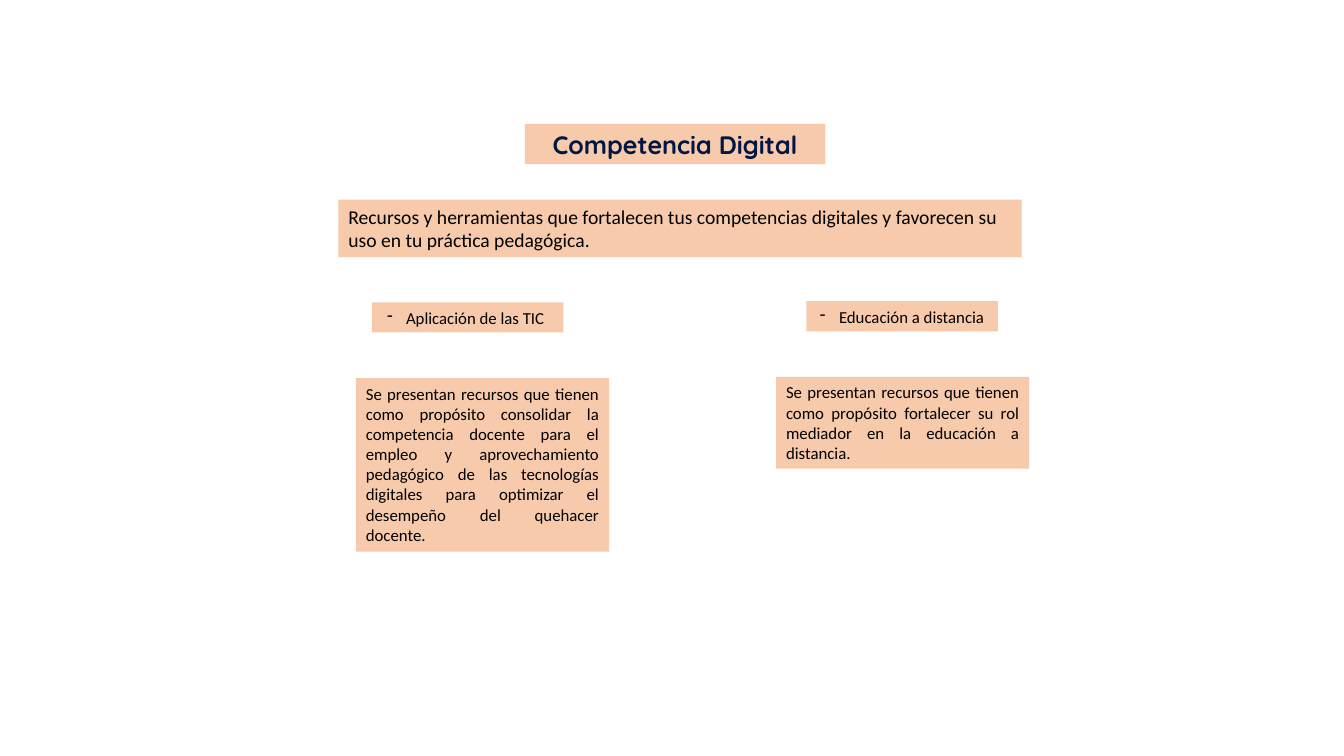
from lxml.etree import SubElement
from pptx import Presentation
from pptx.dml.color import RGBColor
from pptx.enum.shapes import MSO_SHAPE
from pptx.enum.text import MSO_ANCHOR, MSO_AUTO_SIZE, PP_ALIGN
from pptx.oxml.ns import qn
from pptx.util import Cm, Pt

PEACH = RGBColor(0xF7, 0xCA, 0xAC)
NAVY = RGBColor(0x01, 0x16, 0x43)
BLACK = RGBColor(0x00, 0x00, 0x00)

presentation = Presentation()
presentation.slide_width = Cm(33.87)
presentation.slide_height = Cm(19.05)
slide = presentation.slides.add_slide(presentation.slide_layouts[6])


def add_box(text, left, top, width, height, size=12, font="Calibri",
            color=BLACK, bold=False, align=PP_ALIGN.LEFT, dash=False):
    box = slide.shapes.add_shape(MSO_SHAPE.RECTANGLE, Cm(left), Cm(top), Cm(width), Cm(height))
    box.shadow.inherit = False
    box.fill.solid()
    box.fill.fore_color.rgb = PEACH
    box.line.fill.background()

    frame = box.text_frame
    frame.word_wrap = True
    frame.auto_size = MSO_AUTO_SIZE.SHAPE_TO_FIT_TEXT
    frame.vertical_anchor = MSO_ANCHOR.TOP
    frame.margin_left = frame.margin_right = Cm(0.25)
    frame.margin_top = frame.margin_bottom = Cm(0.13)

    paragraph = frame.paragraphs[0]
    paragraph.alignment = align
    run = paragraph.add_run()
    run.text = text
    run.font.name = font
    run.font.size = Pt(size)
    run.font.bold = bold
    run.font.color.rgb = color

    # Hanging dash in front of the text
    if dash:
        properties = paragraph._p.get_or_add_pPr()
        properties.set("marL", str(Cm(0.48)))
        properties.set("indent", str(-Cm(0.48)))
        bullet_color = SubElement(properties, qn("a:buClr"))
        SubElement(bullet_color, qn("a:srgbClr")).set("val", str(color))
        SubElement(properties, qn("a:buChar")).set("char", "-")


# Title and introduction
add_box("Competencia Digital", 13.23, 3.12, 7.57, 1.02, size=18, font="Quicksand",
        color=NAVY, bold=True, align=PP_ALIGN.CENTER)
add_box("Recursos y herramientas que fortalecen tus competencias digitales y favorecen su "
        "uso en tu práctica pedagógica.", 8.53, 5.03, 17.22, 1.45, size=14)

# Topics: name, its left and top, description, its left, top and height
topics = [
    ("Aplicación de las TIC ", 9.37, 7.62,
     "Se presentan recursos que tienen como propósito consolidar la competencia docente "
     "para el empleo y aprovechamiento pedagógico de las tecnologías digitales para "
     "optimizar el desempeño del quehacer docente. ", 8.97, 9.53, 4.37),
    ("Educación a distancia", 20.32, 7.59,
     "Se presentan recursos que tienen como propósito fortalecer su rol mediador en la "
     "educación a distancia. ", 19.56, 9.5, 2.31),
]
for topic, topic_left, topic_top, description, left, top, height in topics:
    add_box(topic, topic_left, topic_top, 4.83, 0.76, align=PP_ALIGN.CENTER, dash=True)
    add_box(description, left, top, 6.38, height, align=PP_ALIGN.JUSTIFY)

presentation.save("out.pptx")
